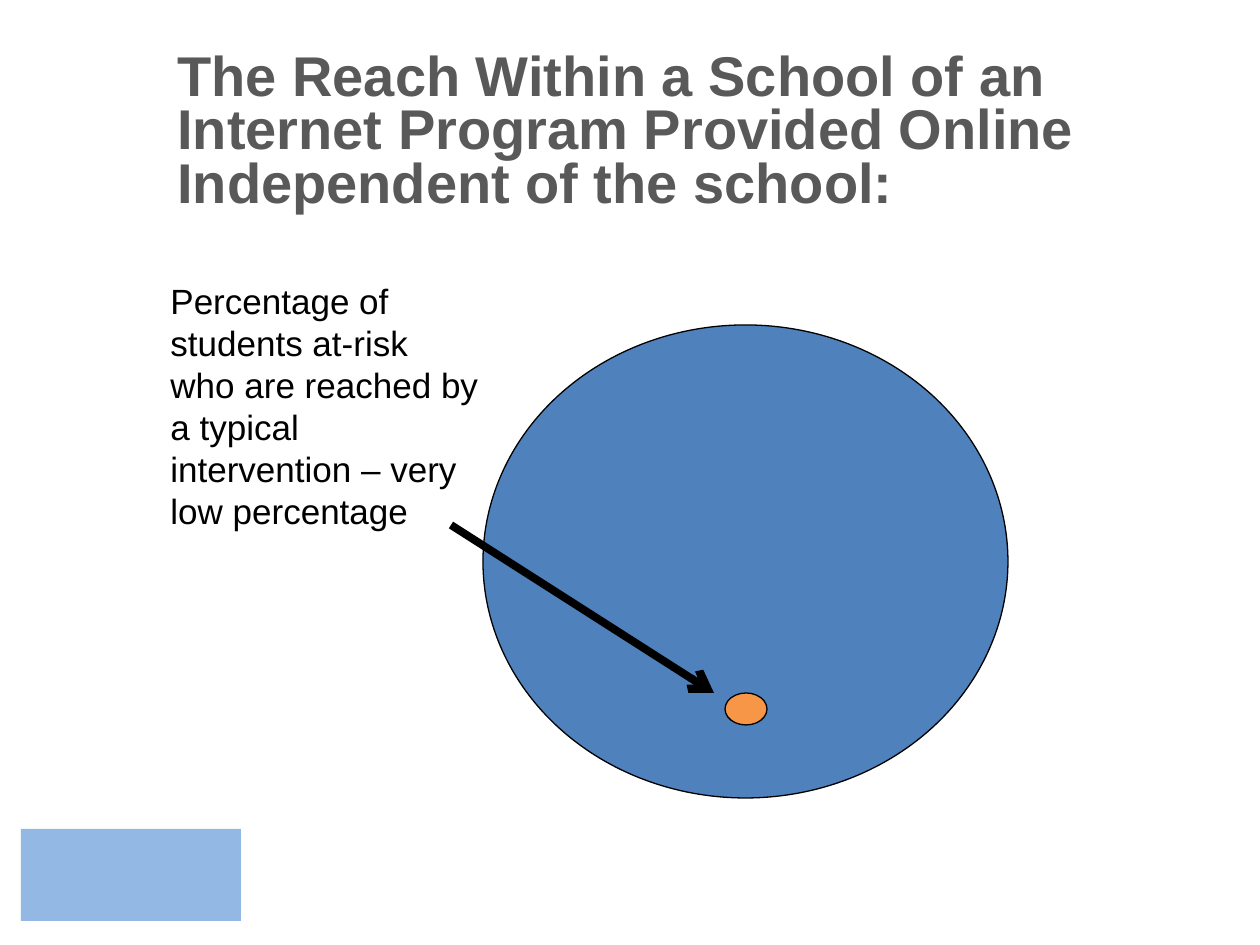
from dataclasses import dataclass

from lxml import etree
from pptx import Presentation
from pptx.dml.color import RGBColor
from pptx.enum.shapes import MSO_CONNECTOR, MSO_SHAPE
from pptx.oxml.ns import qn
from pptx.util import Emu, Pt

PX = 914400 // 126
OVAL = MSO_SHAPE.OVAL
RECTANGLE = MSO_SHAPE.RECTANGLE
STRAIGHT = MSO_CONNECTOR.STRAIGHT
FONT = "Arial"
COLORS = {
    "title": "595959",
    "black": "000000",
    "school": "4F81BD",
    "reached": "F79646",
    "panel": "94B8E4",
}


@dataclass
class Box:
    left: int
    top: int
    width: int
    height: int

    def emu(self) -> list[Emu]:
        return [px(n) for n in (self.left, self.top, self.width, self.height)]


@dataclass
class Label:
    box: Box
    text: str
    size: int
    color: str
    bold: bool = False
    line_spacing: float = 1.0


@dataclass
class Figure:
    kind: MSO_SHAPE
    box: Box
    fill: str
    outlined: bool = True


LABELS = [
    Label(
        Box(165, 47, 1095, 624),
        "The Reach Within a School of an \v"
        "Internet Program Provided Online\v"
        "Independent of the school:",
        32, "title", bold=True, line_spacing=0.8,
    ),
    Label(
        Box(158, 273, 336, 267),
        "Percentage of students at-risk who are reached by "
        "a typical intervention – very low percentage",
        20, "black",
    ),
]
FIGURES = [
    Figure(OVAL, Box(483, 325, 525, 473), "school"),
    Figure(OVAL, Box(725, 693, 42, 32), "reached"),
    Figure(RECTANGLE, Box(21, 829, 220, 92), "panel", outlined=False),
]
ARROW_START = (451, 525)
ARROW_END = (714, 693)


def px(length: int) -> Emu:
    return Emu(length * PX)


def color(name: str) -> RGBColor:
    return RGBColor.from_string(COLORS[name])


def add_label(slide, label: Label) -> None:
    text_frame = slide.shapes.add_textbox(*label.box.emu()).text_frame
    text_frame.word_wrap = True
    text_frame.text = label.text
    paragraph = text_frame.paragraphs[0]
    paragraph.line_spacing = label.line_spacing
    for run in paragraph.runs:
        run.font.name = FONT
        run.font.size = Pt(label.size)
        run.font.bold = label.bold
        run.font.color.rgb = color(label.color)


def add_figure(slide, figure: Figure) -> None:
    shape = slide.shapes.add_shape(figure.kind, *figure.box.emu())
    shape.shadow.inherit = False
    shape.fill.solid()
    shape.fill.fore_color.rgb = color(figure.fill)
    if figure.outlined:
        shape.line.color.rgb = color("black")
        shape.line.width = Pt(0.75)
    else:
        shape.line.fill.background()


def add_arrow(slide, start: tuple[int, int], end: tuple[int, int]) -> None:
    points = [px(n) for n in (*start, *end)]
    connector = slide.shapes.add_connector(STRAIGHT, *points)
    connector.line.color.rgb = color("black")
    connector.line.width = Pt(4.5)
    properties = connector._element.spPr
    etree.SubElement(properties.find(qn("a:ln")), qn("a:tailEnd"), type="arrow")
    etree.SubElement(properties, qn("a:effectLst"))


def main() -> None:
    presentation = Presentation()
    presentation.slide_width = px(1260)
    presentation.slide_height = px(945)
    slide = presentation.slides.add_slide(presentation.slide_layouts[6])
    for label in LABELS:
        add_label(slide, label)
    school, reached, panel = FIGURES
    add_figure(slide, school)
    add_figure(slide, reached)
    add_arrow(slide, ARROW_START, ARROW_END)
    add_figure(slide, panel)
    presentation.save("out.pptx")


if __name__ == "__main__":
    main()
